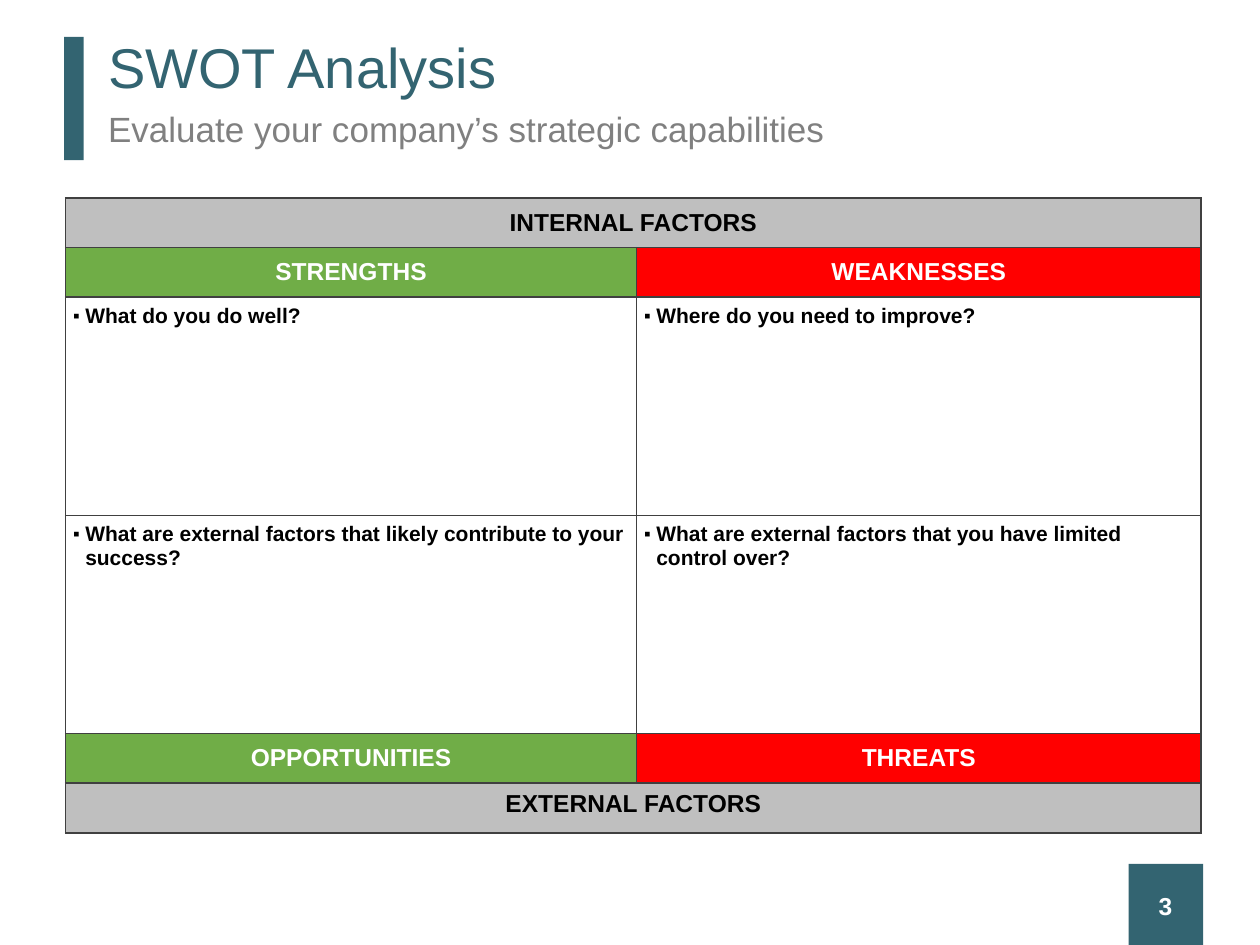
import pptx
import pptx.util
import pptx.dml.color
import pptx.enum.shapes
import pptx.enum.text
import lxml.etree

Pt = pptx.util.Pt
Align = pptx.enum.text.PP_ALIGN
Anchor = pptx.enum.text.MSO_ANCHOR
teal, gray, green, red = "336471", "BFBFBF", "70AD47", "FF0000"
white, black, edge = "FFFFFF", "000000", "404040"


def color(code):
    return pptx.dml.color.RGBColor.from_string(code)


def write(par, text, size, code, bold):
    run = par.add_run()
    run.text = text
    run.font.name = "Arial"
    run.font.size = Pt(size)
    run.font.bold = bold
    run.font.color.rgb = color(code)


deck = pptx.Presentation()
deck.slide_width, deck.slide_height = Pt(720), Pt(540)
slide = deck.slides.add_slide(deck.slide_layouts[6])

for box in [(36.6, 21, 11.2, 70.5), (645, 493.7, 42.5, 46.3)]:
    bar = slide.shapes.add_shape(
        pptx.enum.shapes.MSO_SHAPE.RECTANGLE, *[Pt(n) for n in box])
    bar.shadow.inherit = False
    bar.fill.solid()
    bar.fill.fore_color.rgb = color(teal)
    bar.line.fill.background()

labels = [
    ((54.7, 21.6, 629.3, 37.4), "SWOT Analysis", 32, teal, False,
     Align.LEFT, Anchor.MIDDLE, 0.9),
    ((54.7, 60.5, 480.2, 31), "Evaluate your company’s strategic capabilities",
     20, "808080", False, Align.LEFT, Anchor.TOP, 0.9),
    ((645, 503.3, 41.8, 28), "3", 14, white, True,
     Align.CENTER, Anchor.MIDDLE, 1.0),
]
for box, text, size, code, bold, align, anchor, space in labels:
    frame = slide.shapes.add_textbox(*[Pt(n) for n in box]).text_frame
    frame.word_wrap = True
    frame.vertical_anchor = anchor
    par = frame.paragraphs[0]
    par.alignment = align
    par.line_spacing = space
    write(par, text, size, code, bold)

rows = [
    (28.35, ["INTERNAL FACTORS", ""], [gray, gray], black),
    (28.35, ["STRENGTHS", "WEAKNESSES"], [green, red], white),
    (124.7, ["What do you do well?", "Where do you need to improve?"],
     None, black),
    (124.7, ["What are external factors that likely contribute to your success?",
             "What are external factors that you have limited control over?"],
     None, black),
    (28.35, ["OPPORTUNITIES", "THREATS"], [green, red], white),
    (28.35, ["EXTERNAL FACTORS", ""], [gray, gray], black),
]
table = slide.shapes.add_table(
    len(rows), 2, Pt(37.5), Pt(113.1), Pt(648.8), Pt(362.8)).table
table.first_row = table.horz_banding = False
table.columns[0].width, table.columns[1].width = Pt(326.3), Pt(322.5)
last = len(rows) - 1
for r in (0, last):
    table.cell(r, 0).merge(table.cell(r, 1))

space = "http://schemas.openxmlformats.org/drawingml/2006/main"
tag = "{" + space + "}"
for r, (high, texts, fills, code) in enumerate(rows):
    table.rows[r].height = Pt(high)
    for c, text in enumerate(texts):
        cell = table.cell(r, c)
        cell.margin_left = cell.margin_right = Pt(4.25)
        cell.margin_top = cell.margin_bottom = Pt(4.25)
        head = fills and r != last
        cell.vertical_anchor = Anchor.MIDDLE if head else Anchor.TOP
        props = cell._tc.get_or_add_tcPr()
        for side in ("lnL", "lnR", "lnT", "lnB"):
            line = lxml.etree.SubElement(props, tag + side, w=str(Pt(1)))
            solid = lxml.etree.SubElement(line, tag + "solidFill")
            lxml.etree.SubElement(solid, tag + "srgbClr", val=edge)
        if fills:
            cell.fill.solid()
            cell.fill.fore_color.rgb = color(fills[c])
        else:
            cell.fill.background()
        if not text:
            continue
        par = cell.text_frame.paragraphs[0]
        par.space_after = Pt(3)
        if fills:
            par.alignment = Align.CENTER
        else:
            props = par._p.get_or_add_pPr()
            props.set("marL", str(Pt(7)))
            props.set("indent", str(-Pt(7)))
            lxml.etree.SubElement(props, tag + "buSzPct", val="90000")
            lxml.etree.SubElement(props, tag + "buFont", typeface="Arial")
            lxml.etree.SubElement(props, tag + "buChar", char="▪")
        write(par, text, 14 if fills else 12, code, True)

deck.save("out.pptx")
